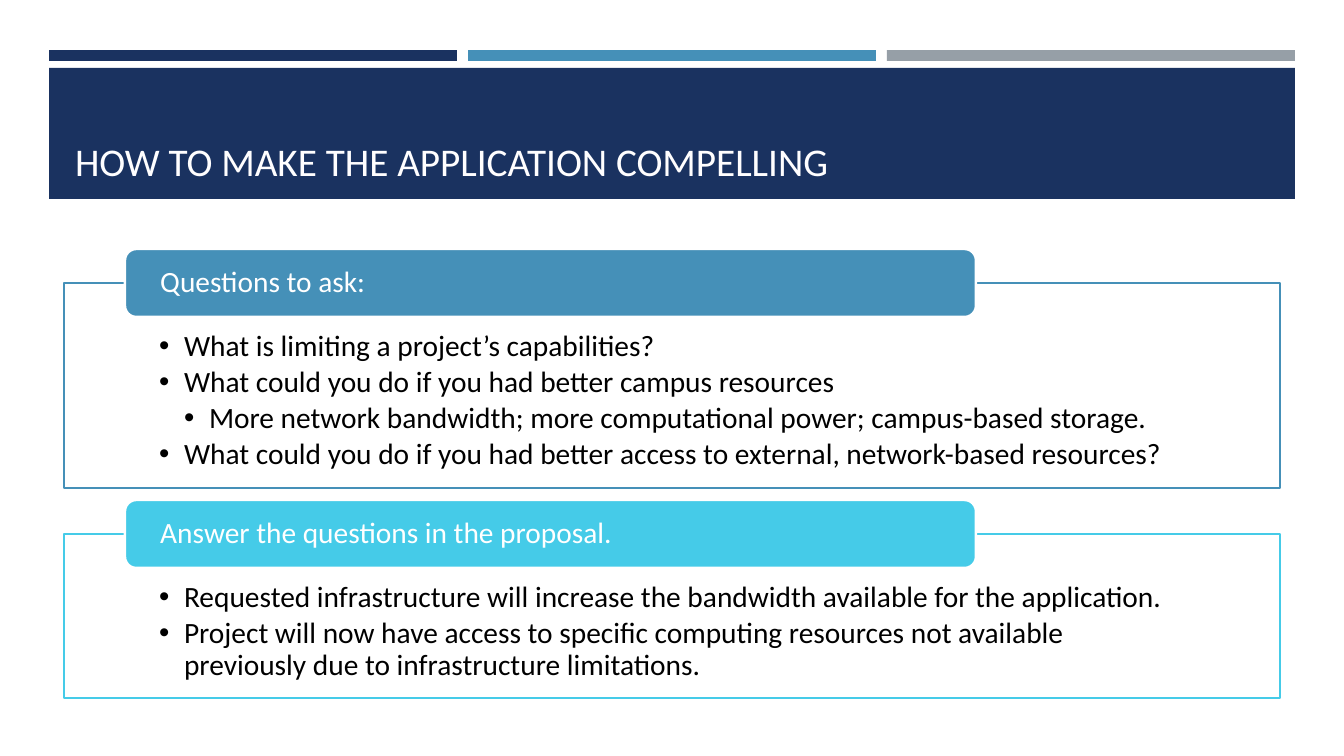
import pptx
import pptx.util
import pptx.dml.color
import pptx.enum.shapes
import pptx.enum.text
import pptx.oxml.ns
from lxml import etree

RGBColor = pptx.dml.color.RGBColor
NAVY = RGBColor(0x1A, 0x32, 0x60)
BLUE = RGBColor(0x45, 0x90, 0xB8)
GRAY = RGBColor(0x96, 0x9F, 0xA7)
CYAN = RGBColor(0x45, 0xCB, 0xE8)
WHITE = RGBColor(0xFF, 0xFF, 0xFF)
TITLE_WHITE = RGBColor(0xFF, 0xFE, 0xFF)
BLACK = RGBColor(0x00, 0x00, 0x00)

RECTANGLE = pptx.enum.shapes.MSO_SHAPE.RECTANGLE
ROUNDED = pptx.enum.shapes.MSO_SHAPE.ROUNDED_RECTANGLE
ANCHOR = pptx.enum.text.MSO_ANCHOR
PX = 914400 / 100.8
INDENT = 25
TAB_RISE = 34

SECTIONS = [
    (283, 205, BLUE, "Questions to ask:", [
        (1, "What is limiting a project’s capabilities?"),
        (1, "What could you do if you had better campus resources"),
        (2, "More network bandwidth; more computational power; campus-based storage."),
        (1, "What could you do if you had better access to external, network-based resources?"),
    ]),
    (534, 164, CYAN, "Answer the questions in the proposal.", [
        (1, "Requested infrastructure will increase the bandwidth available for the application."),
        (1, "Project will now have access to specific computing resources not available "
            "previously due to infrastructure limitations."),
    ]),
]


def px(value):
    return pptx.util.Emu(round(value * PX))


def add_box(slide, kind, bounds, fill, line=None):
    shape = slide.shapes.add_shape(kind, *map(px, bounds))
    shape.shadow.inherit = False
    shape.fill.solid()
    shape.fill.fore_color.rgb = fill
    if line is None:
        shape.line.fill.background()
    else:
        shape.line.color.rgb = line
        shape.line.width = pptx.util.Pt(1.75)
    return shape


def prepare_text(shape, anchor, left, top, right, bottom):
    frame = shape.text_frame
    frame.word_wrap = True
    frame.vertical_anchor = anchor
    frame.margin_left, frame.margin_top = px(left), px(top)
    frame.margin_right, frame.margin_bottom = px(right), px(bottom)
    return frame


def write_paragraph(paragraph, text, size, color):
    paragraph.text = text
    paragraph.alignment = pptx.enum.text.PP_ALIGN.LEFT
    paragraph.line_spacing = 0.9
    paragraph.font.name = "Calibri"
    paragraph.font.size = pptx.util.Pt(size)
    paragraph.font.color.rgb = color


def add_bullet(paragraph, level):
    paragraph.level = level
    paragraph.space_after = pptx.util.Pt(3)
    properties = paragraph._p.get_or_add_pPr()
    properties.set("marL", str(px(INDENT * level)))
    properties.set("indent", str(-px(INDENT)))
    qualified = pptx.oxml.ns.qn
    etree.SubElement(properties, qualified("a:buFont")).set("typeface", "Arial")
    etree.SubElement(properties, qualified("a:buChar")).set("char", "•")
    defaults = properties.find(qualified("a:defRPr"))
    if defaults is not None:
        properties.append(defaults)


def add_header(slide):
    for index, color in enumerate((NAVY, BLUE, GRAY)):
        add_box(slide, RECTANGLE, (49 + 419 * index, 50, 408, 11), color)
    banner = add_box(slide, RECTANGLE, (49, 68, 1246, 131), NAVY)
    frame = prepare_text(banner, ANCHOR.BOTTOM, 26, 5, 26, 14)
    write_paragraph(frame.paragraphs[0], "HOW TO MAKE THE APPLICATION COMPELLING", 28, TITLE_WHITE)


def add_section(slide, top, height, color, heading, bullets):
    panel = add_box(slide, RECTANGLE, (64, top, 1216, height), WHITE, color)
    frame = prepare_text(panel, ANCHOR.TOP, 95, 48, 95, 16)
    for index, (level, text) in enumerate(bullets):
        paragraph = frame.add_paragraph() if index else frame.paragraphs[0]
        write_paragraph(paragraph, text, 21, BLACK)
        add_bullet(paragraph, level)
    tab = add_box(slide, ROUNDED, (125, top - TAB_RISE, 851, 2 * TAB_RISE), color, WHITE)
    frame = prepare_text(tab, ANCHOR.MIDDLE, 32, 0, 32, 0)
    write_paragraph(frame.paragraphs[0], heading, 21, WHITE)


def main():
    presentation = pptx.Presentation()
    presentation.slide_width = px(1344)
    presentation.slide_height = px(756)
    slide = presentation.slides.add_slide(presentation.slide_layouts[6])
    add_header(slide)
    for section in SECTIONS:
        add_section(slide, *section)
    presentation.save("out.pptx")


if __name__ == "__main__":
    main()
